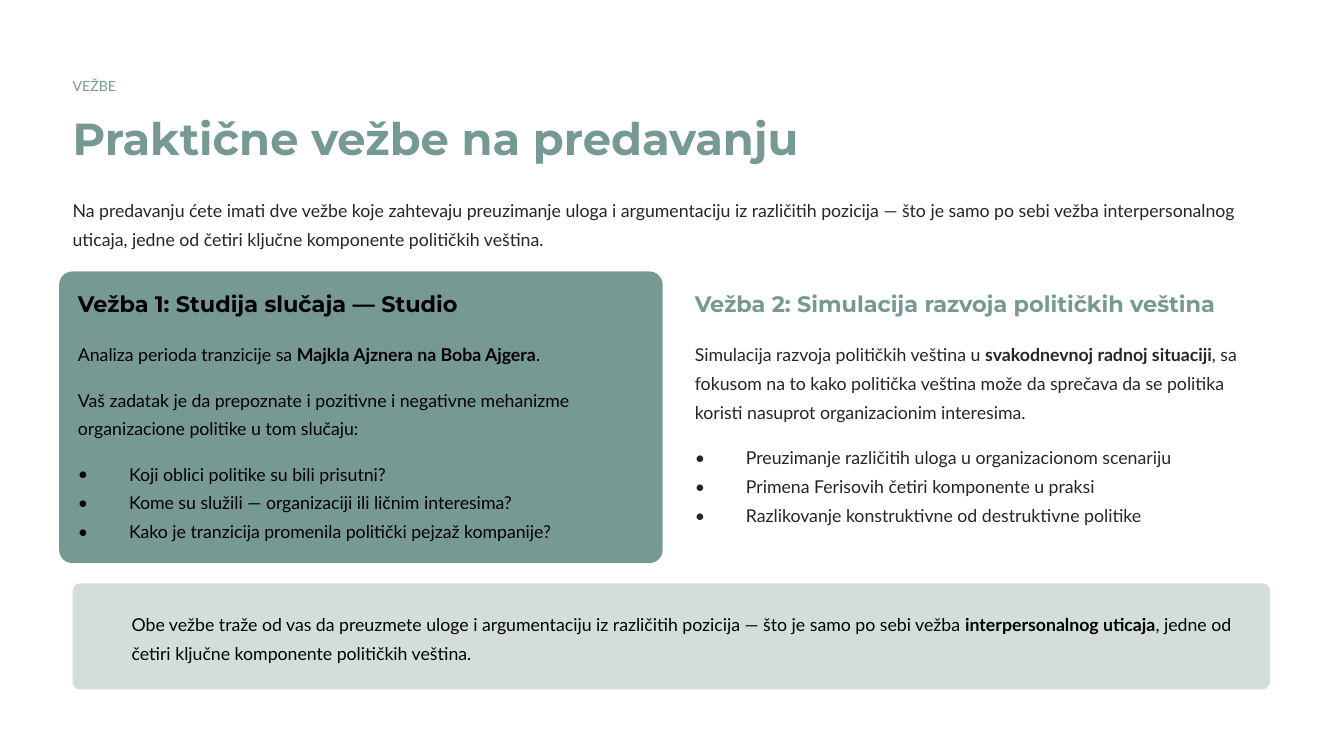
from dataclasses import dataclass

from lxml import etree
from pptx import Presentation
from pptx.dml.color import RGBColor
from pptx.enum.shapes import MSO_SHAPE
from pptx.oxml.ns import qn
from pptx.util import Inches, Pt

ROUNDED = MSO_SHAPE.ROUNDED_RECTANGLE

COLORS = {
    "paper": "FFFFFF",
    "sage": "769993",
    "mist": "D3DEDC",
    "ink": "272525",
    "black": "000000",
}
LEFT, COLUMN_1, COLUMN_2 = 0.54, 0.58, 5.17
BULLET_INDENT = 0.38


@dataclass(frozen=True)
class Style:
    font: str
    size: float
    leading: float
    bold: bool = False


LABEL = Style("Lato", 7.5, 12.5)
TITLE = Style("Montserrat", 24, 30.5, True)
HEADING = Style("Montserrat", 12, 15, True)
BODY = Style("Lato", 9.5, 15.5)


@dataclass(frozen=True)
class Panel:
    left: float
    top: float
    width: float
    height: float
    rounding: float
    color: str


@dataclass(frozen=True)
class TextBlock:
    left: float
    top: float
    width: float
    height: float
    style: Style
    color: str
    lines: tuple[str, ...]  # **...** marks bold words
    wrap: bool = True
    bullets: bool = False


PANELS = [
    Panel(0.44, 2.02, 4.49, 2.17, 0.045, "sage"),
    Panel(LEFT, 4.34, 8.91, 0.79, 0.072, "mist"),
]

TEXTS = [
    # Header and introduction
    TextBlock(LEFT, 0.53, 0.35, 0.17, LABEL, "sage", ("VEŽBE",), wrap=False),
    TextBlock(LEFT, 0.8, 5.49, 0.42, TITLE, "sage",
              ("Praktične vežbe na predavanju",), wrap=False),
    TextBlock(LEFT, 1.43, 8.91, 0.43, BODY, "ink", (
        "Na predavanju ćete imati dve vežbe koje zahtevaju preuzimanje uloga i "
        "argumentaciju iz različitih pozicija — što je samo po sebi vežba "
        "interpersonalnog uticaja, jedne od četiri ključne komponente političkih "
        "veština.",)),
    # Exercise 1
    TextBlock(COLUMN_1, 2.15, 2.91, 0.21, HEADING, "black",
              ("Vežba 1: Studija slučaja — Studio",), wrap=False),
    TextBlock(COLUMN_1, 2.5, 4.22, 0.22, BODY, "black",
              ("Analiza perioda tranzicije sa **Majkla Ajznera na Boba Ajgera**.",),
              wrap=False),
    TextBlock(COLUMN_1, 2.84, 4.22, 0.43, BODY, "black", (
        "Vaš zadatak je da prepoznate i pozitivne i negativne mehanizme "
        "organizacione politike u tom slučaju:",)),
    TextBlock(COLUMN_1, 3.39, 4.22, 0.75, BODY, "black", (
        "Koji oblici politike su bili prisutni?",
        "Kome su služili — organizaciji ili ličnim interesima?",
        "Kako je tranzicija promenila politički pejzaž kompanije?"), bullets=True),
    # Exercise 2
    TextBlock(COLUMN_2, 2.15, 3.94, 0.21, HEADING, "sage",
              ("Vežba 2: Simulacija razvoja političkih veština",), wrap=False),
    TextBlock(COLUMN_2, 2.5, 4.29, 0.65, BODY, "ink", (
        "Simulacija razvoja političkih veština u **svakodnevnoj radnoj situaciji**, "
        "sa fokusom na to kako politička veština može da sprečava da se politika "
        "koristi nasuprot organizacionim interesima.",)),
    TextBlock(COLUMN_2, 3.27, 4.29, 0.75, BODY, "ink", (
        "Preuzimanje različitih uloga u organizacionom scenariju",
        "Primena Ferisovih četiri komponente u praksi",
        "Razlikovanje konstruktivne od destruktivne politike"), bullets=True),
    # Closing note
    TextBlock(0.98, 4.51, 8.34, 0.43, BODY, "black", (
        "Obe vežbe traže od vas da preuzmete uloge i argumentaciju iz različitih "
        "pozicija — što je samo po sebi vežba **interpersonalnog uticaja**, jedne od "
        "četiri ključne komponente političkih veština.",)),
]


def rgb(name: str) -> RGBColor:
    return RGBColor.from_string(COLORS[name])


def draw_panel(page, panel: Panel) -> None:
    shape = page.shapes.add_shape(ROUNDED, Inches(panel.left), Inches(panel.top),
                                  Inches(panel.width), Inches(panel.height))
    shape.adjustments[0] = panel.rounding
    shape.shadow.inherit = False
    shape.fill.solid()
    shape.fill.fore_color.rgb = rgb(panel.color)
    shape.line.fill.background()


def add_bullet(para, style: Style) -> None:
    properties = para._p.get_or_add_pPr()
    properties.set("marL", str(Inches(BULLET_INDENT)))
    properties.set("indent", str(-Inches(BULLET_INDENT)))
    etree.SubElement(properties, qn("a:buSzPct")).set("val", "100000")
    etree.SubElement(properties, qn("a:buFont")).set("typeface", style.font)
    etree.SubElement(properties, qn("a:buChar")).set("char", "•")
    # The closing mark sets the size of the bullet
    closing = etree.SubElement(para._p, qn("a:endParaRPr"))
    closing.set("sz", str(Pt(style.size).centipoints))


def draw_text(page, block: TextBlock) -> None:
    box = page.shapes.add_textbox(Inches(block.left), Inches(block.top),
                                  Inches(block.width), Inches(block.height))
    frame = box.text_frame
    frame.word_wrap = block.wrap
    frame.margin_left = frame.margin_right = 0
    frame.margin_top = frame.margin_bottom = 0
    frame.text = "\n".join(block.lines)
    for para, line in zip(frame.paragraphs, block.lines):
        # Odd pieces lie between the bold marks
        pieces = line.split("**")
        para.text = pieces[0]
        for piece in pieces[1:]:
            para.add_run().text = piece
        if block.bullets:
            add_bullet(para, block.style)
        para.line_spacing = Pt(block.style.leading)
        for index, span in enumerate(para.runs):
            span.font.name = block.style.font
            span.font.size = Pt(block.style.size)
            span.font.bold = block.style.bold or index % 2 == 1
            span.font.color.rgb = rgb(block.color)


def main() -> None:
    deck = Presentation()
    deck.slide_width = Inches(10)
    deck.slide_height = deck.slide_width * 9 // 16
    page = deck.slides.add_slide(deck.slide_layouts[6])
    page.background.fill.solid()
    page.background.fill.fore_color.rgb = rgb("paper")

    for panel in PANELS:
        draw_panel(page, panel)
    for block in TEXTS:
        draw_text(page, block)
    deck.save("out.pptx")


if __name__ == "__main__":
    main()
